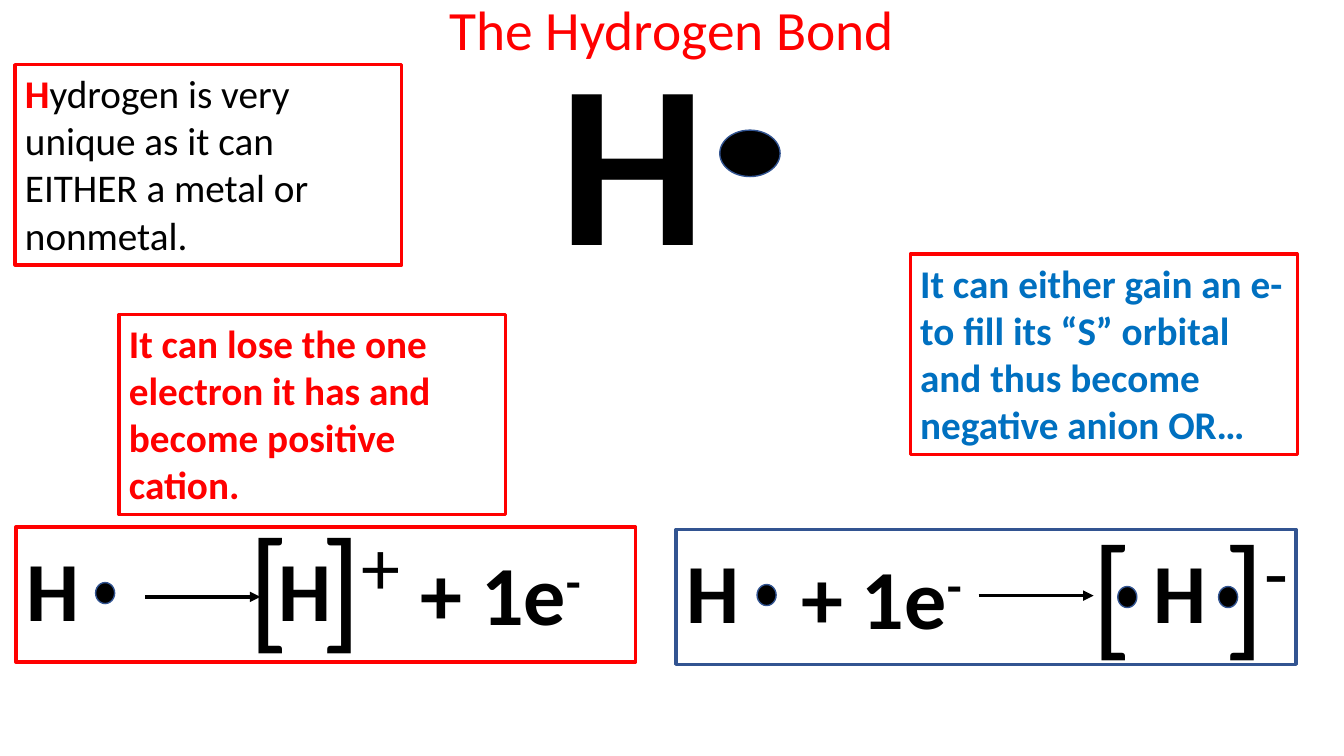
from lxml import etree
from pptx import Presentation
from pptx.dml.color import RGBColor
from pptx.enum import shapes, text
from pptx.oxml import ns
from pptx.util import Cm, Pt

BLACK = RGBColor(0, 0, 0)
RED = RGBColor(0xFF, 0, 0)
BLUE = RGBColor(0, 0x70, 0xC0)
NAVY = RGBColor(0x32, 0x54, 0x91)
FONT = "Calibri"


def add_run(p, words, size, color=BLACK, bold=False, raised=False, spacing=0):
    """Add one run; raised makes it superscript, spacing widens it in points."""
    r = p.add_run()
    r.text = words
    r.font.name = FONT
    r.font.size = Pt(size)
    r.font.bold = bold
    r.font.color.rgb = color
    rPr = r._r.get_or_add_rPr()
    if raised:
        rPr.set("baseline", "30000")
    if spacing:
        rPr.set("spc", str(round(spacing * 100)))


def add_text(s, left, top, width, height, border=None):
    """Add a text box and return its first paragraph."""
    sp = s.shapes.add_textbox(Cm(left), Cm(top), Cm(width), Cm(height))
    tf = sp.text_frame
    tf.word_wrap = True
    tf.auto_size = text.MSO_AUTO_SIZE.SHAPE_TO_FIT_TEXT
    if border is not None:
        sp.line.color.rgb = border
        sp.line.width = Pt(2.25)
    return tf.paragraphs[0]


def add_note(s, left, top):
    return add_text(s, left, top, 9.75, 5.05, RED)


def add_hydrogen(s, left, top):
    add_run(add_text(s, left, top, 2.26, 2.82), "H", 60, bold=True)


def add_electron(s, left, top, width=0.48, height=0.53):
    sp = s.shapes.add_shape(shapes.MSO_SHAPE.OVAL, Cm(left), Cm(top), Cm(width), Cm(height))
    sp.shadow.inherit = False
    sp.fill.solid()
    sp.fill.fore_color.rgb = BLACK
    sp.line.color.rgb = NAVY
    sp.line.width = Pt(1)


def add_electron_term(s, left, top):
    p = add_text(s, left, top, 4.75, 2.84)
    add_run(p, "+ 1e", 60, bold=True)
    add_run(p, "-", 60, bold=True, raised=True)


def add_brackets(s, left, top, width, charge, spacing=0):
    """Add ion brackets; spacing widens the gap between them, in points."""
    p = add_text(s, left, top, width, 4.37)
    add_run(p, "[", 96)
    add_run(p, " ", 96, spacing=spacing)
    add_run(p, "]", 96)
    add_run(p, charge, 96, raised=True)


def add_arrow(s, left, y, length=2.9):
    line = s.shapes.add_connector(
        shapes.MSO_CONNECTOR.STRAIGHT, Cm(left), Cm(y), Cm(left + length), Cm(y))
    line.line.color.rgb = BLACK
    line.line.width = Pt(2.5)
    etree.SubElement(line.line._get_or_add_ln(), ns.qn("a:tailEnd"), type="triangle")
    etree.SubElement(line._element.spPr, ns.qn("a:effectLst"))


def add_frame(s, left, top, color):
    sp = s.shapes.add_shape(shapes.MSO_SHAPE.RECTANGLE, Cm(left), Cm(top), Cm(15.62), Cm(3.4))
    sp.shadow.inherit = False
    sp.fill.background()
    sp.line.color.rgb = color
    sp.line.width = Pt(2.5)


def add_title(s):
    sp = s.shapes.title
    sp.left, sp.top, sp.width, sp.height = Cm(0), Cm(0), Cm(33.87), Cm(1.63)
    tf = sp.text_frame
    tf.auto_size = text.MSO_AUTO_SIZE.NONE
    tf.vertical_anchor = text.MSO_ANCHOR.MIDDLE
    p = tf.paragraphs[0]
    p.alignment = text.PP_ALIGN.CENTER
    p.line_spacing = 0.9
    add_run(p, "The Hydrogen Bond", 39.6, RED)


def add_notes_on_bonding(s):
    p = add_note(s, 0.38, 1.63)
    add_run(p, "H", 28, RED, bold=True)
    add_run(p, "ydrogen is very unique as it can EITHER a metal or nonmetal.", 28)
    add_run(add_note(s, 22.94, 6.4),
            "It can either gain an e- to fill its “S” orbital and thus become "
            "negative anion OR…", 28, BLUE, bold=True)
    add_run(add_note(s, 3, 7.92),
            "It can lose the one electron it has and become positive cation.",
            28, RED, bold=True)


def add_anion_equation(s):
    add_hydrogen(s, 17.04, 13.46)
    add_electron(s, 19.08, 14.73)
    add_electron_term(s, 19.94, 13.61)
    add_arrow(s, 24.66, 15.01)
    add_hydrogen(s, 28.83, 13.46)
    for left in (28.17, 30.71):
        add_electron(s, left, 14.78)
    add_brackets(s, 27.25, 12.67, 6.22, "-", spacing=43.4)
    add_frame(s, 17.04, 13.34, NAVY)


def add_cation_equation(s):
    add_hydrogen(s, 0.41, 13.41)
    add_electron(s, 2.41, 14.68)
    add_arrow(s, 3.66, 15.04)
    add_hydrogen(s, 6.78, 13.41)
    add_electron_term(s, 10.34, 13.51)
    add_frame(s, 0.4, 13.28, RED)
    add_brackets(s, 6.02, 12.5, 4.75, "+")


def main():
    prs = Presentation()
    prs.slide_width, prs.slide_height = Cm(33.87), Cm(19.05)
    s = prs.slides.add_slide(prs.slide_layouts[5])
    add_title(s)
    add_run(add_text(s, 13.84, 0.2, 5.36, 7.34), "H", 166, bold=True)
    add_electron(s, 18.14, 3.28, 1.52, 1.17)
    add_notes_on_bonding(s)
    add_anion_equation(s)
    add_cation_equation(s)
    prs.save("out.pptx")


if __name__ == "__main__":
    main()
